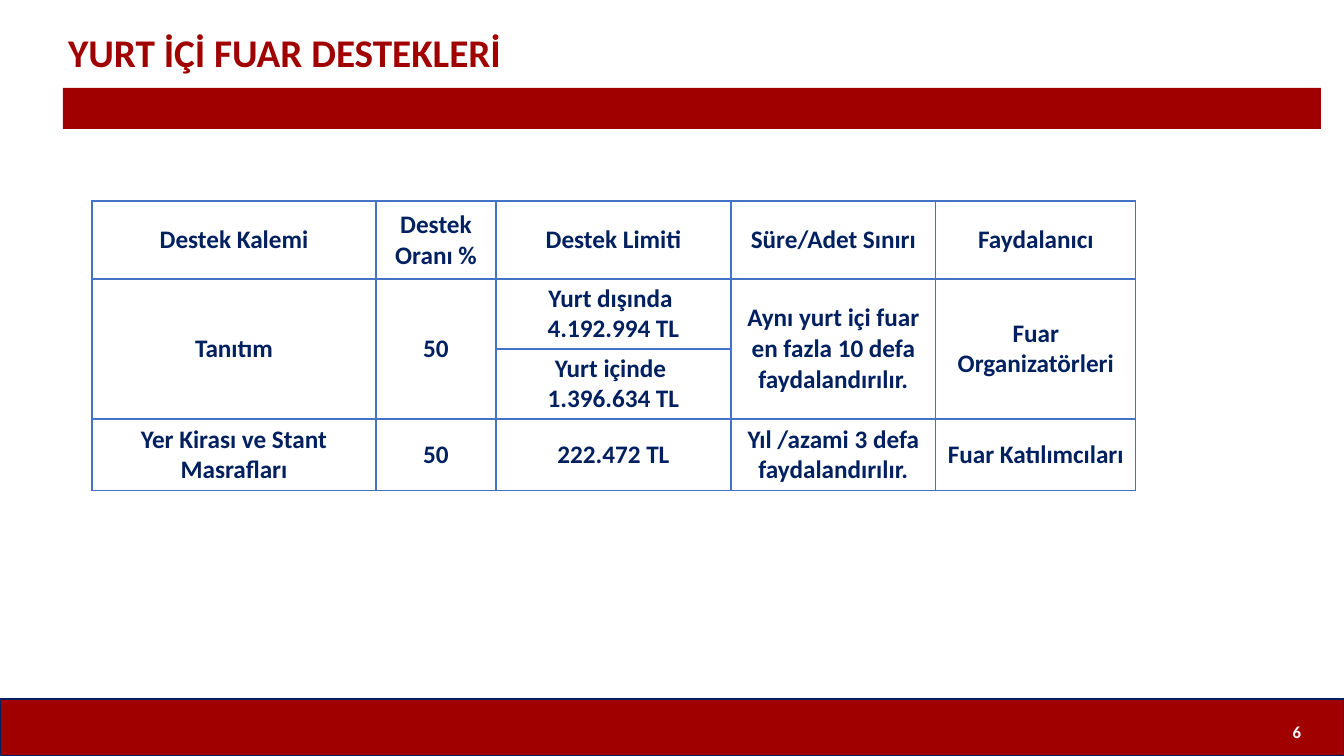
from lxml import etree
from pptx import Presentation
from pptx.dml.color import RGBColor
from pptx.enum.shapes import MSO_SHAPE
from pptx.enum.text import MSO_ANCHOR, PP_ALIGN
from pptx.oxml.ns import qn
from pptx.util import Pt

RECT = MSO_SHAPE.RECTANGLE
MIDDLE = MSO_ANCHOR.MIDDLE
LEFT, CENTER = PP_ALIGN.LEFT, PP_ALIGN.CENTER
RED, NAVY, BLUE, WHITE = "A00000", "002060", "4472C4", "FFFFFF"
SCALE = 914400 / 100.8

COLS = [284, 120, 235, 205, 200]
ROWS = [78, 70, 70, 72]
CELLS = [
    ["Destek Kalemi", "Destek Oranı %", "Destek Limiti", "Süre/Adet Sınırı",
     "Faydalanıcı"],
    ["Tanıtım", "50", "Yurt dışında \n4.192.994 TL",
     "Aynı yurt içi fuar en fazla 10 defa faydalandırılır.",
     "Fuar Organizatörleri"],
    ["", "", "Yurt içinde \n1.396.634 TL", "", ""],
    ["Yer Kirası ve Stant Masrafları", "50", "222.472 TL",
     "Yıl /azami 3 defa faydalandırılır.", "Fuar Katılımcıları"],
]
TALL = [0, 1, 3, 4]  # columns whose second and third rows are merged


def px(n):
    return round(n * SCALE)


def box(*sides):
    return [px(n) for n in sides]


def color(code):
    return RGBColor.from_string(code)


def write(frame, text, size, ink, align):
    frame.text = text
    for para in frame.paragraphs:
        para.alignment = align
        style = {"name": "Calibri", "size": Pt(size), "bold": True}
        for key, value in style.items():
            setattr(para.font, key, value)
        para.font.color.rgb = color(ink)


def add_bar(slide, sides, edge=None):
    bar = slide.shapes.add_shape(RECT, *box(*sides))
    bar.shadow.inherit = False
    bar.fill.solid()
    bar.fill.fore_color.rgb = color(RED)
    if edge:
        bar.line.color.rgb = color(edge)
        bar.line.width = Pt(1)
    else:
        bar.line.fill.background()


def add_label(slide, sides, text, size, ink, align, gap=1.0):
    frame = slide.shapes.add_textbox(*box(*sides)).text_frame
    style = {"word_wrap": True, "vertical_anchor": MIDDLE}
    for side in ("left", "right", "top", "bottom"):
        style["margin_" + side] = px(5)
    for key, value in style.items():
        setattr(frame, key, value)
    write(frame, text, size, ink, align)
    frame.paragraphs[0].line_spacing = gap


def add_edges(cell):
    """Draw the four borders, which must come before the cell's fill."""
    props = cell._tc.get_or_add_tcPr()
    for spot, name in enumerate(("a:lnL", "a:lnR", "a:lnT", "a:lnB")):
        line = etree.Element(qn(name), w=str(Pt(1)))
        fill = etree.SubElement(line, qn("a:solidFill"))
        etree.SubElement(fill, qn("a:srgbClr"), val=BLUE)
        props.insert(spot, line)


def add_grid(slide, left, top):
    sides = box(left, top, sum(COLS), sum(ROWS))
    table = slide.shapes.add_table(len(ROWS), len(COLS), *sides).table
    table.first_row = table.horz_banding = False
    for col, width in zip(table.columns, COLS):
        col.width = px(width)
    for row, height in zip(table.rows, ROWS):
        row.height = px(height)
    style = {"vertical_anchor": MIDDLE, "margin_left": px(6),
             "margin_right": px(6), "margin_top": px(3),
             "margin_bottom": px(3)}
    for r, texts in enumerate(CELLS):
        for c, text in enumerate(texts):
            cell = table.cell(r, c)
            for key, value in style.items():
                setattr(cell, key, value)
            cell.fill.background()
            add_edges(cell)
            write(cell.text_frame, text, 18, NAVY, CENTER)
    for c in TALL:
        table.cell(1, c).merge(table.cell(2, c))


def main():
    deck = Presentation()
    deck.slide_width, deck.slide_height = box(1344, 756)
    slide = deck.slides.add_slide(deck.slide_layouts[6])
    add_bar(slide, (0, 699, 1344, 57), NAVY)
    add_label(slide, (1273, 702, 48, 59), "6", 12, WHITE, CENTER)
    add_bar(slide, (63, 88, 1258, 41))
    add_label(slide, (63, 0, 785, 109), "YURT İÇİ FUAR DESTEKLERİ",
              28, RED, LEFT, 0.9)
    add_grid(slide, 92, 201)
    deck.save("out.pptx")


if __name__ == "__main__":
    main()
